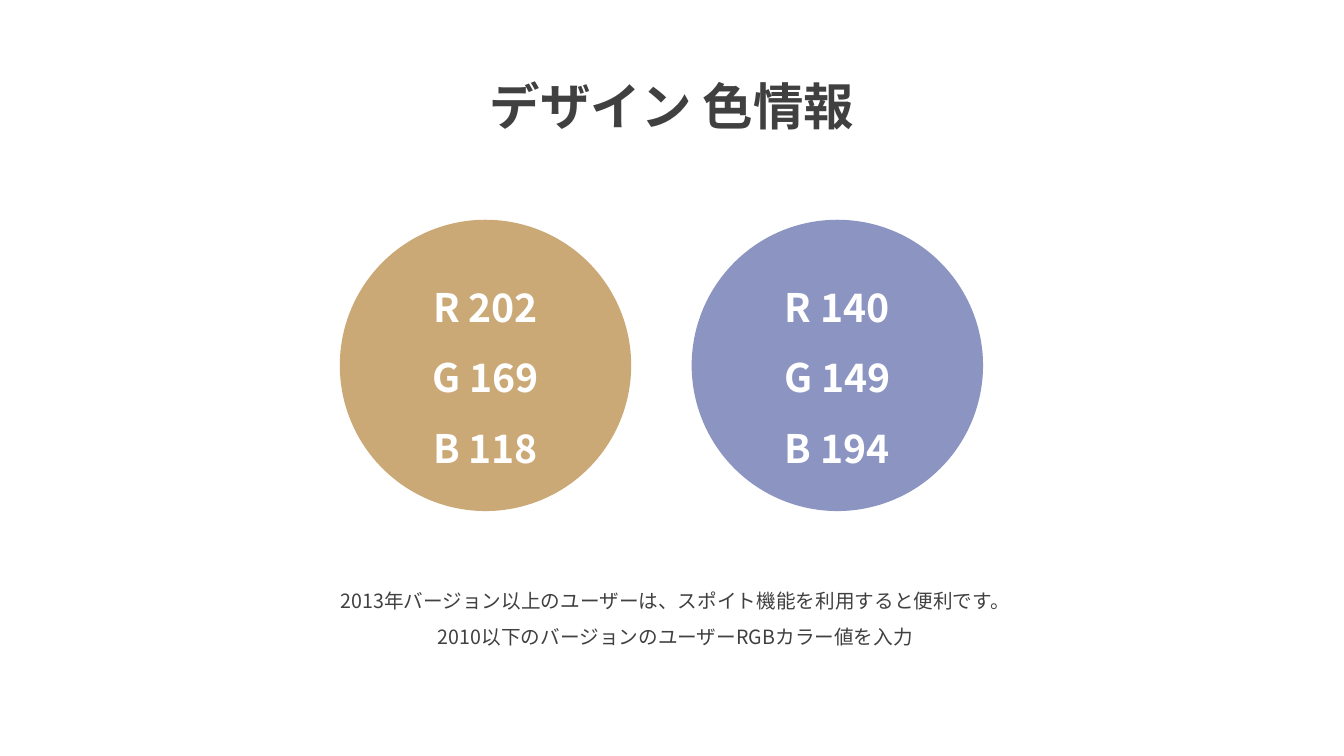
from dataclasses import dataclass

from lxml import etree
from pptx import Presentation, util as u
from pptx.dml.color import RGBColor
from pptx.enum import shapes, text
from pptx.oxml import ns


@dataclass(frozen=True)
class Theme:
    """Colours, font and type sizes of the slide."""

    font: str = "Noto Sans CJK KR"
    ink: tuple = (64, 64, 64)
    paper: tuple = (255, 255, 255)
    swatches: tuple = ((202, 169, 118), (140, 149, 194))
    title_size: int = 36
    swatch_size: int = 28
    note_size: int = 14
    line_spacing: float = 1.5


class Canvas:
    """Draws themed elements on a slide measured in grid cells."""

    ROWS = 75

    def __init__(self, presentation, theme):
        """Add a blank slide and derive the square grid cell."""
        self.theme = theme
        self.slide = presentation.slides.add_slide(presentation.slide_layouts[6])
        self.cell = presentation.slide_height / self.ROWS

    def box(self, *cells):
        """Convert grid cells to slide lengths."""
        return [u.Emu(round(count * self.cell)) for count in cells]

    def set_lines(self, frame, lines, size, color, bold):
        """Fill a text frame with centred lines of one style."""
        frame.word_wrap = True
        for index, line in enumerate(lines):
            paragraph = frame.paragraphs[0] if index == 0 else frame.add_paragraph()
            paragraph.text = line
            paragraph.alignment = text.PP_ALIGN.CENTER
            paragraph.line_spacing = self.theme.line_spacing
            font = paragraph.font
            font.size, font.bold, font.name = u.Pt(size), bold, self.theme.font
            font.color.rgb = RGBColor(*color)
            properties = paragraph._p.pPr.find(ns.qn("a:defRPr"))
            etree.SubElement(properties, ns.qn("a:ea"), typeface=self.theme.font)

    def text_box(self, left, top, width, height, lines, size, bold=False):
        """Add a text box in the ink colour."""
        shape = self.slide.shapes.add_textbox(*self.box(left, top, width, height))
        self.set_lines(shape.text_frame, lines, size, self.theme.ink, bold)
        shape.text_frame.auto_size = text.MSO_AUTO_SIZE.SHAPE_TO_FIT_TEXT

    def swatch(self, left, top, diameter, color):
        """Add a circle labelled with its own colour values."""
        shape = self.slide.shapes.add_shape(
            shapes.MSO_SHAPE.OVAL, *self.box(left, top, diameter, diameter)
        )
        shape.shadow.inherit = False
        shape.fill.solid()
        shape.fill.fore_color.rgb = RGBColor(*color)
        shape.line.fill.background()
        shape.text_frame.vertical_anchor = text.MSO_ANCHOR.MIDDLE
        lines = [f"{channel} {value}" for channel, value in zip("RGB", color)]
        self.set_lines(shape.text_frame, lines, self.theme.swatch_size, self.theme.paper, True)


def main():
    """Build and save the colour information slide."""
    presentation = Presentation()
    presentation.slide_width, presentation.slide_height = u.Inches(13.33), u.Inches(7.5)
    theme = Theme()
    canvas = Canvas(presentation, theme)

    diameter, gap = 28.9, 6
    for index, color in enumerate(theme.swatches):
        canvas.swatch(33.7 + index * (diameter + gap), 21.8, diameter, color)

    canvas.text_box(42.4, 4, 48.5, 9.1, ["デザイン 色情報"], theme.title_size, bold=True)
    notes = [
        "2013年バージョン以上のユーザーは、スポイト機能を利用すると便利です。",
        "2010以下のバージョンのユーザーRGBカラー値を入力",
    ]
    canvas.text_box(25.2, 56.8, 83.6, 7.7, notes, theme.note_size)
    presentation.save("out.pptx")


if __name__ == "__main__":
    main()
